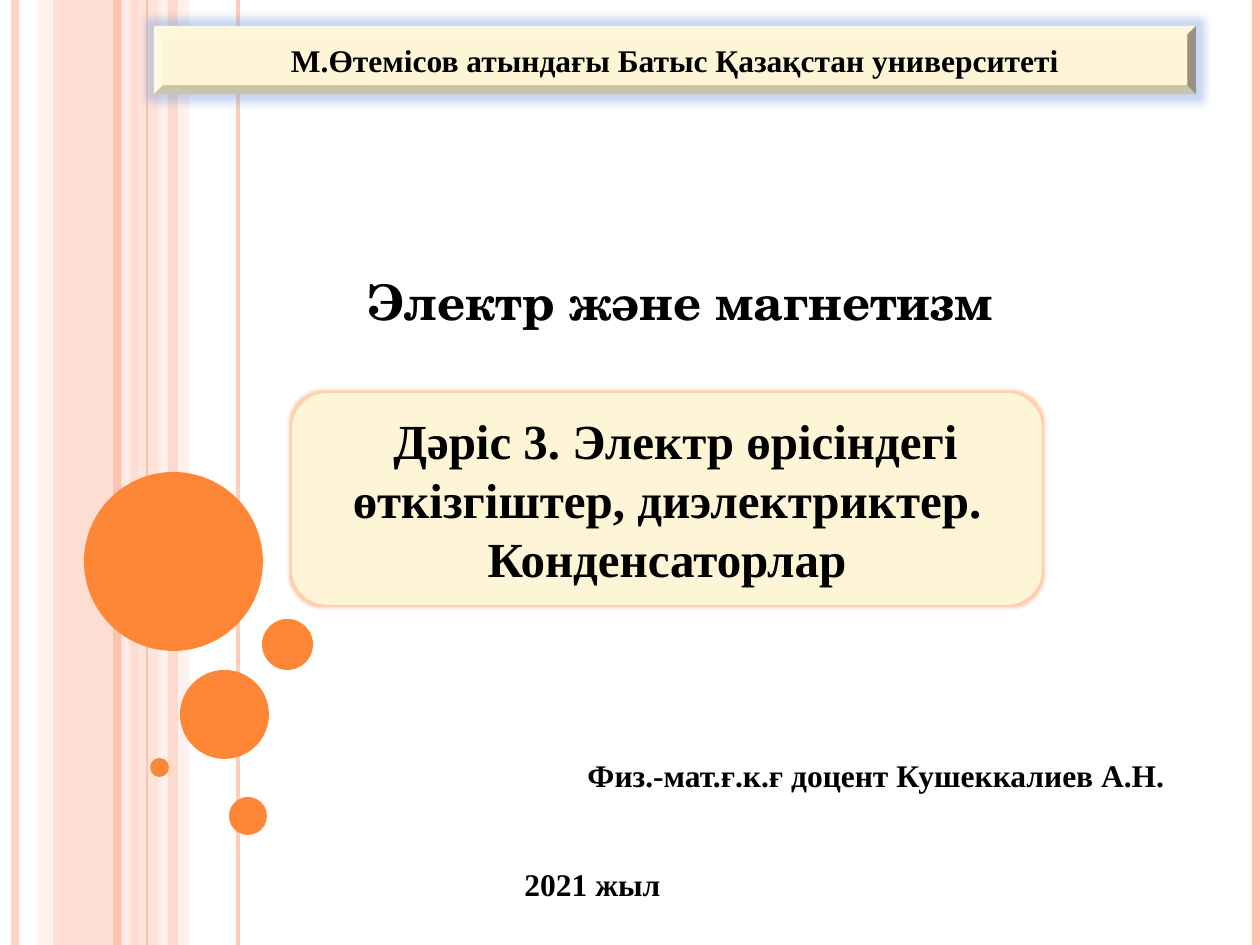
from lxml.etree import SubElement
from pptx import Presentation
from pptx.dml.color import RGBColor
from pptx.enum.shapes import MSO_CONNECTOR, MSO_SHAPE
from pptx.enum.text import MSO_ANCHOR, PP_ALIGN
from pptx.oxml.ns import qn
from pptx.util import Pt

PX = 914400 / 126
WIDTH, HEIGHT = 1260, 945
COLORS = {"peach": "FEC3AE", "rose": "FFD9CE", "blush": "FFEDE8", "orange": "FE8637",
          "cream": "FDF5D5", "blue": "7598D9", "black": "000000"}

# Content: text, box in px, format
UNIVERSITY = "М.Өтемісов атындағы Батыс Қазақстан университеті"
COURSE = "Электр және магнетизм"
LECTURE = "Дәріс 3. Электр өрісіндегі өткізгіштер, диэлектриктер. Конденсаторлар"
LECTURER = "Физ.-мат.ғ.к.ғ доцент Кушеккалиев А.Н."
YEAR = "2021 жыл"

# Background: left, width, colour, opacity %
BANDS = [(53, 84, "peach", 54), (38, 14, "rose", 36), (136, 25, "rose", 70),
         (158, 31, "blush", 71), (168, 10, "peach", 51)]
# x, weight in pt, colour, opacity %
STRIPES = [(15, 4.5, "peach", 73), (126, 4.5, "blush", 83), (117, 4.5, "peach", 100),
           (238, 2.25, "peach", 82), (147, 0.75, "peach", 100), (1256, 4.5, "peach", 100)]
# left, top, diameter
BUBBLES = [(84, 472, 179), (180, 670, 89), (150, 758, 19), (229, 797, 38), (262, 619, 51)]


def px(*lengths):
    return [round(length * PX) for length in lengths]


def set_opacity(color_parent, percent):
    for color in color_parent.iter(qn("a:srgbClr")):
        SubElement(color, qn("a:alpha"), val=str(percent * 1000))


def add_filled(kind, box, color, opacity=100):
    shape = slide.shapes.add_shape(kind, *px(*box))
    shape.shadow.inherit = False
    shape.fill.solid()
    shape.fill.fore_color.rgb = RGBColor.from_string(COLORS[color])
    shape.line.fill.background()
    if opacity < 100:
        set_opacity(shape._element.spPr, opacity)
    return shape


def add_stripe(x, weight, color, opacity):
    stripe = slide.shapes.add_connector(MSO_CONNECTOR.STRAIGHT, *px(x, 0, x, HEIGHT))
    stripe.line.width = Pt(weight)
    stripe.line.color.rgb = RGBColor.from_string(COLORS[color])
    if opacity < 100:
        set_opacity(stripe._element.spPr, opacity)
    SubElement(stripe._element.spPr, qn("a:effectLst"))


def add_glow(shape, color, radius, opacity):
    effects = shape._element.spPr.find(qn("a:effectLst"))
    glow = SubElement(effects, qn("a:glow"), rad=str(px(radius)[0]))
    SubElement(glow, qn("a:srgbClr"), val=COLORS[color])
    set_opacity(glow, opacity)


def write(shape, text, size=18, font="Times New Roman", anchor=MSO_ANCHOR.MIDDLE,
          wrap=True, indent=0):
    frame = shape.text_frame
    frame.word_wrap = wrap
    frame.vertical_anchor = anchor
    paragraph = frame.paragraphs[0]
    paragraph.alignment = PP_ALIGN.CENTER
    if indent:
        paragraph._p.get_or_add_pPr().set("indent", str(px(indent)[0]))
    run = paragraph.add_run()
    run.text = text
    run.font.size, run.font.name, run.font.bold = Pt(size), font, True
    run.font.color.rgb = RGBColor.from_string(COLORS["black"])


prs = Presentation()
prs.slide_width, prs.slide_height = px(WIDTH, HEIGHT)
slide = prs.slides.add_slide(prs.slide_layouts[5])

# Background stripes and bubbles
for left, width, color, opacity in BANDS:
    add_filled(MSO_SHAPE.RECTANGLE, (left, 0, width, HEIGHT), color, opacity)
for stripe in STRIPES:
    add_stripe(*stripe)
for left, top, diameter in BUBBLES:
    add_filled(MSO_SHAPE.OVAL, (left, top, diameter, diameter), "orange")

# University and lecture panels
university = add_filled(MSO_SHAPE.BEVEL, (154, 26, 1042, 68), "cream")
add_glow(university, "blue", 18, 40)
write(university, UNIVERSITY)
lecture = add_filled(MSO_SHAPE.FLOWCHART_ALTERNATE_PROCESS, (292, 393, 750, 212), "cream")
add_glow(lecture, "orange", 6, 40)
write(lecture, LECTURE, size=28, indent=17)

# Course title
course = slide.shapes.title
course.left, course.top, course.width, course.height = px(174, 265, 1012, 72)
write(course, COURSE, size=28, font="TeX Gyre Schola", anchor=MSO_ANCHOR.TOP)

# Lecturer and year
for text, box, wrap in [(LECTURER, (494, 750, 764, 50), True), (YEAR, (511, 859, 163, 50), False)]:
    write(slide.shapes.add_textbox(*px(*box)), text, anchor=MSO_ANCHOR.TOP, wrap=wrap)

prs.save("out.pptx")
